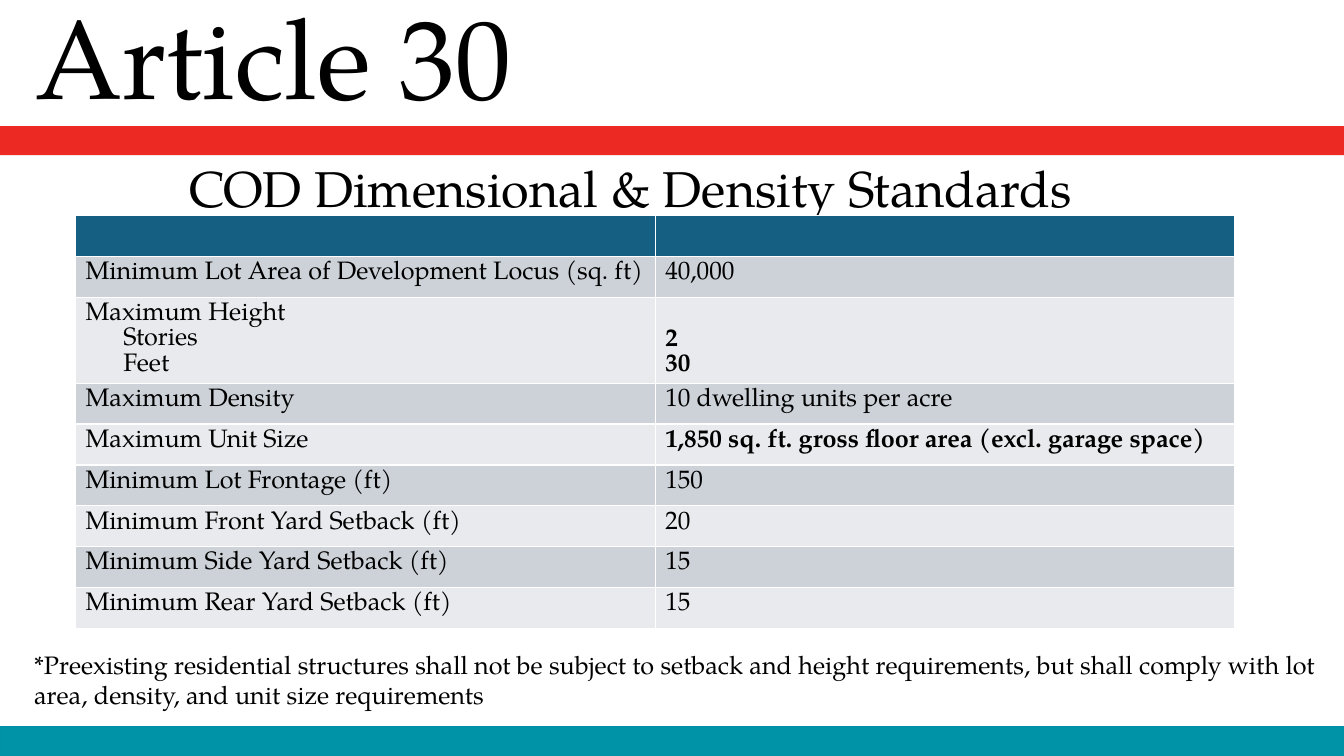
"""Build the Article 30 slide of dimensional and density standards."""
from pptx import Presentation
from pptx.dml.color import RGBColor
from pptx.enum.shapes import MSO_SHAPE
from pptx.enum.text import MSO_ANCHOR, MSO_AUTO_SIZE, PP_ALIGN
from pptx.util import Pt

BLACK = RGBColor(0x00, 0x00, 0x00)
RED = RGBColor(0xED, 0x29, 0x24)
TEAL = RGBColor(0x00, 0x92, 0xA7)
TEAL_EDGE = RGBColor(0x00, 0x90, 0xA8)
HEADER_BLUE = RGBColor(0x15, 0x60, 0x82)
ROW_FILLS = (RGBColor(0xCC, 0xD2, 0xD8), RGBColor(0xE8, 0xEA, 0xED))
FONT = "TeX Gyre Pagella"

ARTICLE = "Article 30"
TITLE = "COD Dimensional & Density Standards"
FOOTNOTE = (
    "*Preexisting residential structures shall not be subject to setback and height "
    "requirements, but shall comply with lot area, density, and unit size requirements"
)
STANDARDS = [
    (["Minimum Lot Area of Development Locus (sq. ft)"], ["40,000"], False),
    (["Maximum Height", "Stories", "Feet"], ["2", "30"], True),
    (["Maximum Density"], ["10 dwelling units per acre"], False),
    (["Maximum Unit Size"], ["1,850 sq. ft. gross floor area (excl. garage space)"], True),
    (["Minimum Lot Frontage (ft)"], ["150"], False),
    (["Minimum Front Yard Setback (ft)"], ["20"], False),
    (["Minimum Side Yard Setback (ft)"], ["15"], False),
    (["Minimum Rear Yard Setback (ft)"], ["15"], False),
]

SLIDE_WIDTH, SLIDE_HEIGHT = 960, 540
TITLE_BOX = (128.2, 100.1, 655.2, 73.4)
ARTICLE_BOX = (-64.8, -12.2, 519.8, 104.4)
FOOTNOTE_BOX = (17.3, 460.1, 931, 51.1)
TABLE_LEFT, TABLE_TOP, COLUMN_WIDTH = 54, 154.1, 414
ROW_HEIGHT, LINE_HEIGHT, SUB_INDENT = 29.2, 18, 27
BAND_HEIGHT = 20.9
BANDS = [
    (SLIDE_HEIGHT - BAND_HEIGHT, TEAL, TEAL_EDGE),
    (90, RED, None),
]


def points(values):
    """Convert plain numbers to point lengths."""
    return [Pt(value) for value in values]


def apply_format(target, values):
    """Set every named attribute on the target."""
    for name, value in values.items():
        setattr(target, name, value)


def format_font(font, size, bold=False):
    """Apply the slide's typeface and text colour."""
    apply_format(font, {"name": FONT, "size": Pt(size), "bold": bold})
    font.color.rgb = BLACK


def write_text(shape, text, size, frame_format, paragraph_format):
    """Write one formatted paragraph into a shape."""
    frame = shape.text_frame
    frame.text = text
    apply_format(frame, {"word_wrap": True, "auto_size": MSO_AUTO_SIZE.NONE, **frame_format})
    apply_format(frame.paragraphs[0], paragraph_format)
    format_font(frame.paragraphs[0].runs[0].font, size)


def write_cell(cell, lines, bold, indent):
    """Write table lines, indenting those after the first."""
    frame = cell.text_frame
    frame.text = "\n".join(lines)
    for index, paragraph in enumerate(frame.paragraphs):
        paragraph.line_spacing = Pt(LINE_HEIGHT)
        if index and indent:
            paragraph._p.get_or_add_pPr().set("marL", str(Pt(indent)))
        format_font(paragraph.runs[0].font, 18, bold)


def add_standards_table(slide):
    """Add the table with a blank header row and banded rows."""
    row_count = len(STANDARDS) + 1
    box = points((TABLE_LEFT, TABLE_TOP, 2 * COLUMN_WIDTH, row_count * ROW_HEIGHT))
    table = slide.shapes.add_table(row_count, 2, *box).table
    for column in table.columns:
        column.width = Pt(COLUMN_WIDTH)
    for index, row in enumerate(table.rows):
        row.height = Pt(ROW_HEIGHT)
        for cell in row.cells:
            cell.fill.solid()
            cell.fill.fore_color.rgb = ROW_FILLS[(index - 1) % 2] if index else HEADER_BLUE
    for index, (labels, values, bold) in enumerate(STANDARDS, start=1):
        table.rows[index].height = Pt(ROW_HEIGHT + (len(labels) - 1) * (LINE_HEIGHT - 2))
        if len(labels) > 1:
            table.rows[index].height = Pt(len(labels) * LINE_HEIGHT + 7.2)
        write_cell(table.cell(index, 0), labels, False, SUB_INDENT)
        write_cell(table.cell(index, 1), values, bold, 0)
        if len(values) < len(labels):
            table.cell(index, 1).vertical_anchor = MSO_ANCHOR.BOTTOM


def add_band(slide, top, fill, edge):
    """Add a full-width colour band."""
    box = points((0, top, SLIDE_WIDTH, BAND_HEIGHT))
    band = slide.shapes.add_shape(MSO_SHAPE.RECTANGLE, *box)
    band.shadow.inherit = False
    band.fill.solid()
    band.fill.fore_color.rgb = fill
    if edge is None:
        band.line.fill.background()
    else:
        band.line.color.rgb = edge
        band.line.width = Pt(1.5)


def main():
    """Build and save the presentation."""
    presentation = Presentation()
    apply_format(presentation, {"slide_width": Pt(SLIDE_WIDTH), "slide_height": Pt(SLIDE_HEIGHT)})
    slide = presentation.slides.add_slide(presentation.slide_layouts[5])

    title = slide.shapes.title
    apply_format(title, dict(zip(("left", "top", "width", "height"), points(TITLE_BOX))))
    write_text(title, TITLE, 36, {"vertical_anchor": MSO_ANCHOR.MIDDLE},
               {"alignment": PP_ALIGN.LEFT, "line_spacing": 0.9})

    add_standards_table(slide)
    footnote = slide.shapes.add_textbox(*points(FOOTNOTE_BOX))
    write_text(footnote, FOOTNOTE, 18, {"vertical_anchor": MSO_ANCHOR.TOP}, {})
    for top, fill, edge in BANDS:
        add_band(slide, top, fill, edge)

    article = slide.shapes.add_textbox(*points(ARTICLE_BOX))
    write_text(article, ARTICLE, 80, {"vertical_anchor": MSO_ANCHOR.BOTTOM},
               {"alignment": PP_ALIGN.CENTER, "line_spacing": 0.9})
    presentation.save("out.pptx")


if __name__ == "__main__":
    main()
